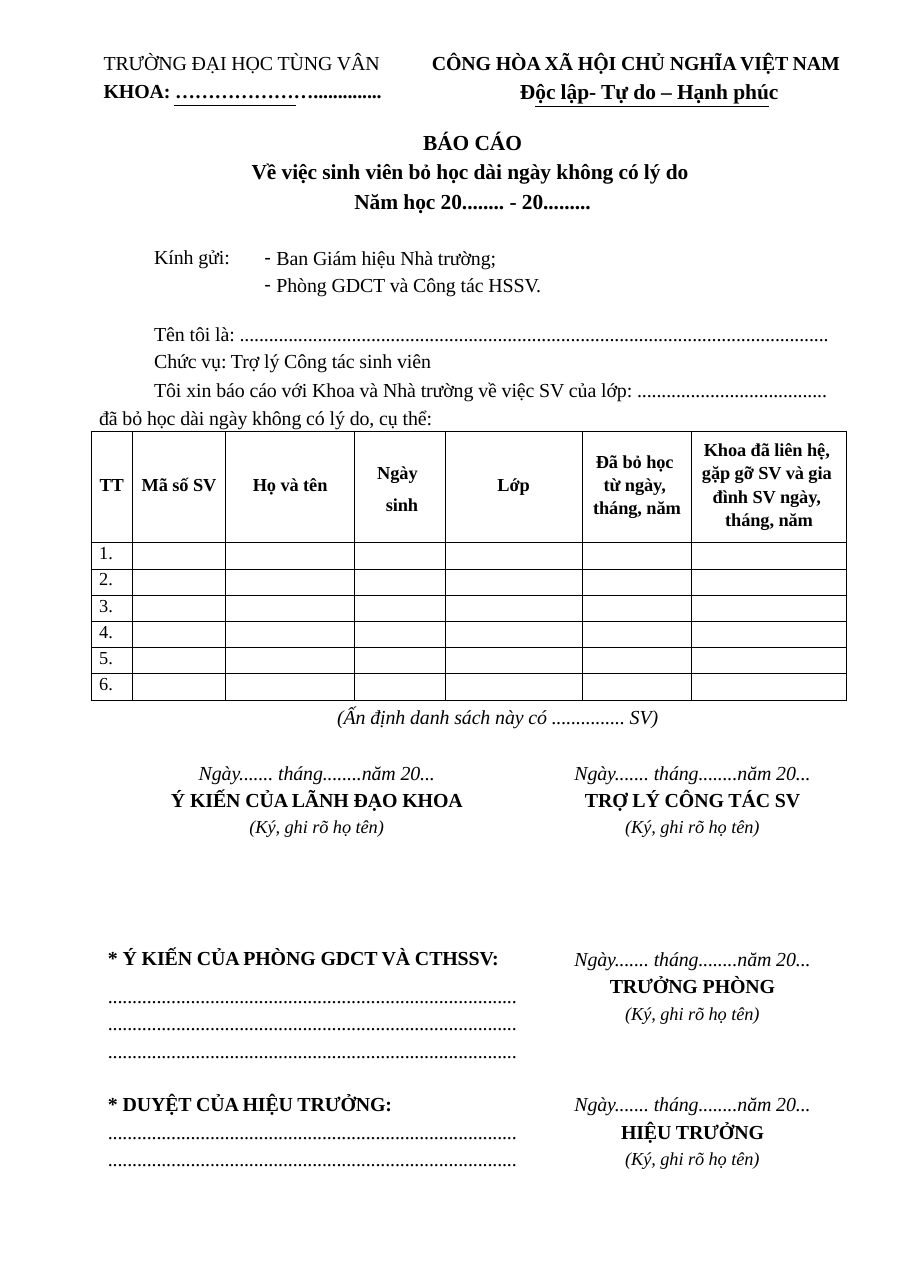
from copy import deepcopy

from lxml import etree
from pptx import Presentation
from pptx.dml.color import RGBColor
from pptx.enum.shapes import MSO_CONNECTOR
from pptx.enum.text import MSO_ANCHOR, MSO_AUTO_SIZE, PP_ALIGN
from pptx.oxml.ns import qn
from pptx.util import Inches, Pt

LEFT, CENTER = PP_ALIGN.LEFT, PP_ALIGN.CENTER
TOP, MIDDLE = MSO_ANCHOR.TOP, MSO_ANCHOR.MIDDLE
NO_AUTOFIT = MSO_AUTO_SIZE.NONE
STRAIGHT = MSO_CONNECTOR.STRAIGHT

PAGE_WIDTH, PAGE_HEIGHT = Pt(595), Pt(842.5)
FONT = "Times New Roman"
COLORS = {"ink": "000000"}
INK = RGBColor.from_string(COLORS["ink"])
BOLD, ITALIC, PLAIN = "bold", "italic", "plain"
DOTS = "." * 84

# Width and heading; \v breaks a line within a paragraph
COLUMNS = [
    (0.37, "TT"),
    (0.85, "Mã số SV"),
    (1.17, "Họ và tên"),
    (0.82, "Ngày \v sinh"),
    (1.25, "Lớp"),
    (0.99, "Đã bỏ học \vtừ ngày, \vtháng, năm"),
    (1.41, "Khoa đã liên hệ, \vgặp gỡ SV và gia \vđình SV ngày, \vtháng, năm"),
]
STUDENT_ROWS = 6


def place(left, top, width, height):
    """Turn percentages of the page into lengths."""
    return (int(PAGE_WIDTH * left / 100), int(PAGE_HEIGHT * top / 100),
            int(PAGE_WIDTH * width / 100), int(PAGE_HEIGHT * height / 100))


def format_paragraph(paragraph, size=13, style=PLAIN, before=0, indent=0.01,
                     first=0, align=LEFT, spacing=1.0):
    paragraph.alignment = align
    paragraph.space_before = Pt(before)
    paragraph.line_spacing = spacing
    properties = paragraph._p.get_or_add_pPr()
    properties.set("marL", str(Inches(indent)))
    properties.set("indent", str(Inches(first)))
    for run in paragraph.runs:
        run.font.name, run.font.size = FONT, Pt(size)
        run.font.bold, run.font.italic = style == BOLD, style == ITALIC
        run.font.color.rgb = INK
        run._r.get_or_add_rPr().set("spc", "-5")
    for line_break in paragraph._p.findall(qn("a:br")):
        line_break.insert(0, deepcopy(paragraph.runs[0]._r.rPr))


def write(frame, lines, inset=0.05, align=LEFT):
    """Each line is its text and a dict of paragraph settings."""
    frame.word_wrap = True
    frame.auto_size = NO_AUTOFIT
    frame.vertical_anchor = TOP
    frame.margin_left = frame.margin_right = frame.margin_bottom = 0
    frame.margin_top = Inches(inset)
    frame.text = "\n".join(text for text, _ in lines)
    for paragraph, (text, settings) in zip(frame.paragraphs, lines):
        paragraph.text = text
        format_paragraph(paragraph, **{"align": align, **settings})


def add_text(slide, box, lines, inset=0.05, align=LEFT):
    write(slide.shapes.add_textbox(*place(*box)).text_frame, lines, inset, align)


def add_letterhead(slide, box, lines, rule_end):
    add_text(slide, box, lines, inset=0.04)
    # Thin rule under the second line
    left, top, width, height = place(*box)
    y = int(top + height * 1.02)
    rule = slide.shapes.add_connector(
        STRAIGHT, int(left + width * 0.25), y, int(left + width * rule_end), y)
    rule.line.color.rgb = INK
    rule.line.width = Pt(0.75)
    etree.SubElement(rule._element.spPr, qn("a:effectLst"))


def move_placeholder(placeholder, box):
    (placeholder.left, placeholder.top,
     placeholder.width, placeholder.height) = place(*box)


def add_title(slide, box):
    title = slide.shapes.title
    move_placeholder(title, box)
    heading = {"size": 14, "style": BOLD, "indent": 0}
    write(title.text_frame, [
        ("BÁO CÁO", {**heading, "before": 3.5}),
        ("Về việc sinh viên bỏ học dài ngày không có lý do \vNăm học 20........ - 20.........",
         {**heading, "spacing": 1.15}),
    ], align=CENTER)


def add_recipients(slide, label_box, list_box):
    add_text(slide, label_box, [("Kính gửi:", {"before": 0.9})], inset=0.01)
    recipients = slide.placeholders[1]
    move_placeholder(recipients, list_box)
    item = {"indent": 0.12, "first": -0.11}
    write(recipients.text_frame, [
        ("Ban Giám hiệu Nhà trường;", {**item, "before": 3.4}),
        ("Phòng GDCT và Công tác HSSV.", {**item, "before": 2.4}),
    ])
    for paragraph in recipients.text_frame.paragraphs:
        bullet = etree.SubElement(paragraph._p.get_or_add_pPr(), qn("a:buChar"))
        bullet.set("char", "-")


def add_statement(slide, box):
    add_text(slide, box, [
        ("Tên tôi là: " + "." * 121, {"before": 3.4, "indent": 0.51}),
        ("Chức vụ: Trợ lý Công tác sinh viên", {"before": 2.4, "indent": 0.51}),
        ("Tôi xin báo cáo với Khoa và Nhà trường về việc SV của lớp: " + "." * 39
         + " \vđã bỏ học dài ngày không có lý do, cụ thể:",
         {"before": 0.9, "first": 0.5, "spacing": Pt(18)}),
    ])


def format_cell(cell):
    cell.margin_left = cell.margin_right = cell.margin_top = cell.margin_bottom = 0
    cell.fill.background()
    properties = cell._tc.get_or_add_tcPr()
    for order, side in enumerate(("lnL", "lnR", "lnT", "lnB")):
        border = etree.Element(qn("a:" + side), w=str(Pt(0.5)))
        fill = etree.SubElement(border, qn("a:solidFill"))
        etree.SubElement(fill, qn("a:srgbClr")).set("val", COLORS["ink"])
        properties.insert(order, border)


def add_student_table(slide, box):
    left, top, width, height = place(*box)
    table = slide.shapes.add_table(
        STUDENT_ROWS + 1, len(COLUMNS), left, top, width, height).table
    table.first_row = table.horz_banding = False
    heading_height = Inches(1.01)
    for row in table.rows:
        row.height = (height - heading_height) // STUDENT_ROWS
    table.rows[0].height = heading_height
    for cell in table.iter_cells():
        format_cell(cell)

    # Heading row
    for index, (column_width, heading) in enumerate(COLUMNS):
        table.columns[index].width = Inches(column_width)
        cell = table.cell(0, index)
        cell.vertical_anchor = MIDDLE
        cell.margin_bottom = Inches(0.06)
        paragraph = cell.text_frame.paragraphs[0]
        paragraph.text = heading
        format_paragraph(paragraph, 12, BOLD, indent=0, align=CENTER,
                         spacing=1.57 if heading.count("\v") == 1 else 1.15)

    # Numbered rows, the other cells left open
    for number in range(1, STUDENT_ROWS + 1):
        first = table.cell(number, 0).text_frame
        first.text = f"{number}."
        format_paragraph(first.paragraphs[0], 12, indent=0.07, spacing=Pt(13.8))
        for index in range(1, len(COLUMNS)):
            paragraph = table.cell(number, index).text_frame.paragraphs[0]
            etree.SubElement(paragraph._p, qn("a:endParaRPr")).set("sz", "1200")


def add_signature(slide, box, role):
    add_text(slide, box, [
        ("Ngày....... tháng........năm 20...", {"style": ITALIC, "before": 3.2, "indent": 0}),
        (role, {"style": BOLD, "before": 2.3, "indent": 0}),
        ("(Ký, ghi rõ họ tên)", {"size": 12, "style": ITALIC, "before": 2.5, "indent": 0}),
    ], align=CENTER)


def add_opinion(slide, box, heading, gaps, inset, before):
    add_text(slide, box, [(heading, {"style": BOLD, "before": before})]
             + [(DOTS, {"before": gap}) for gap in gaps], inset)


def main():
    report = Presentation()
    report.slide_width, report.slide_height = PAGE_WIDTH, PAGE_HEIGHT
    slide = report.slides.add_slide(report.slide_layouts[1])

    add_letterhead(slide, (11.26, 3.59, 31.23, 4.53), [
        ("TRƯỜNG ĐẠI HỌC TÙNG VÂN", {"before": 3.4}),
        ("KHOA: …………………..............", {"style": BOLD, "before": 2.4}),
    ], rule_end=0.68)
    add_letterhead(slide, (47.34, 3.59, 45.88, 4.62), [
        ("CÔNG HÒA XÃ HỘI CHỦ NGHĨA VIỆT NAM", {"style": BOLD, "before": 3.1}),
        ("Độc lập- Tự do – Hạnh phúc",
         {"size": 14, "style": BOLD, "before": 2.4, "indent": 0.81}),
    ], rule_end=0.81)
    add_title(slide, (27.6, 9.57, 48.67, 7.09))
    add_recipients(slide, (16.83, 18.89, 8.72, 2.05), (28.93, 18.63, 31.36, 4.53))
    add_statement(slide, (10.77, 24.53, 82.08, 8.8))
    add_student_table(slide, (10.05, 33.5, 83.17, 20.85))
    add_text(slide, (36.92, 54.62, 36.08, 2.05),
             [("(Ấn định danh sách này có ............... SV)",
               {"style": ITALIC, "before": 0.9})], inset=0.01)

    add_signature(slide, (18.4, 58.63, 32.81, 6.5), "Ý KIẾN CỦA LÃNH ĐẠO KHOA")
    for top, role in ((58.63, "TRỢ LÝ CÔNG TÁC SV"), (73.08, "TRƯỞNG PHÒNG"),
                      (84.36, "HIỆU TRƯỞNG")):
        add_signature(slide, (62.71, top, 26.76, 6.5), role)
    add_opinion(slide, (11.74, 73.33, 46.25, 9.32), "* Ý KIẾN CỦA PHÒNG GDCT VÀ CTHSSV:",
                (9.2, 2.2, 2.4), inset=0.01, before=0.9)
    add_opinion(slide, (11.74, 84.36, 46.25, 6.67), "* DUYỆT CỦA HIỆU TRƯỞNG:",
                (2.4, 2.3), inset=0.05, before=3.4)
    report.save("out.pptx")


if __name__ == "__main__":
    main()
